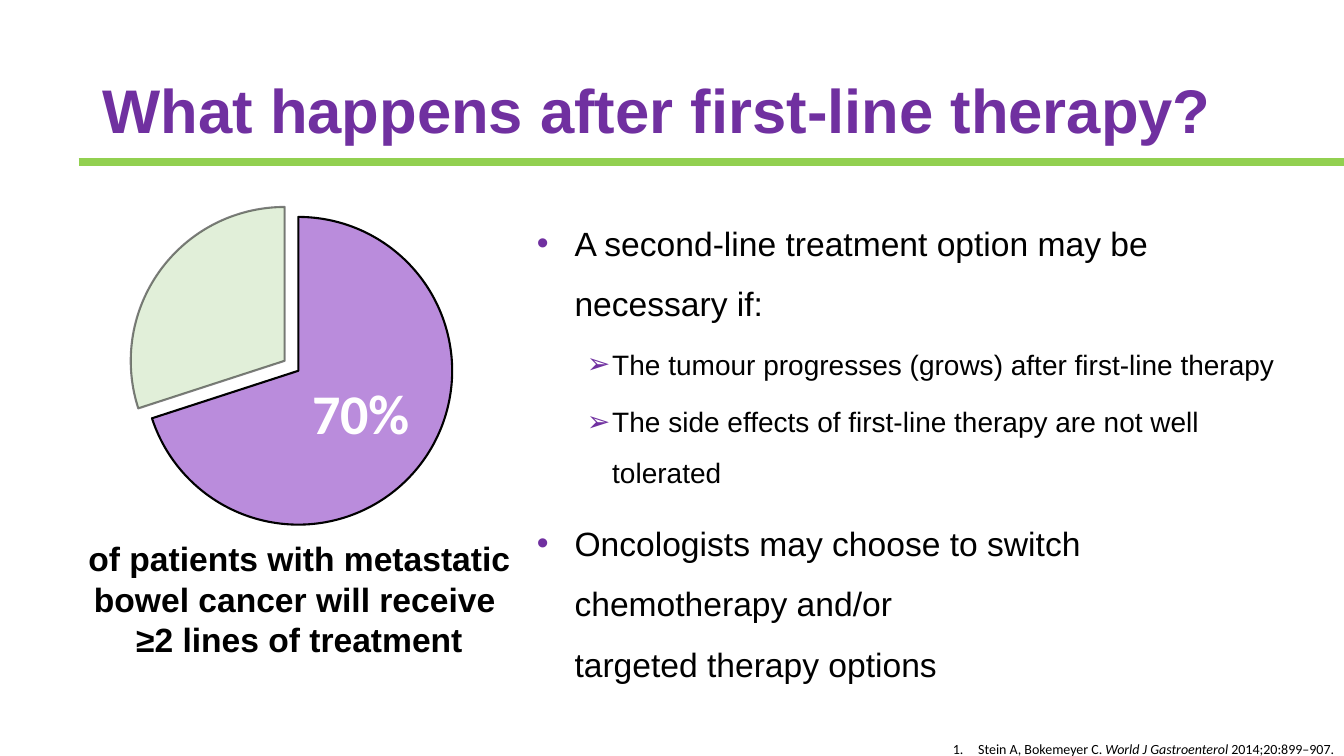
"""Builds a slide on treatment after first-line therapy for bowel cancer."""
from dataclasses import dataclass
from typing import Optional

from lxml import etree
from pptx import Presentation, util as u
from pptx.chart import data
from pptx.dml import color
from pptx.enum import chart as kinds, shapes, text
from pptx.oxml import ns

PURPLE, BLACK, WHITE = "7030A0", "000000", "FFFFFF"
ALIGN, ANCHOR = text.PP_ALIGN, text.MSO_ANCHOR


@dataclass
class Run:
    text: str
    size: float
    color: str = BLACK
    bold: bool = False
    italic: bool = False
    font: str = "Arial"


@dataclass
class Para:
    runs: list[Run]
    align: ALIGN = ALIGN.LEFT
    space: float = 1
    before: float = 0
    level: int = 0
    margin: float = 0
    hang: float = 0
    bullet: str = ""


@dataclass
class Box:
    left: float
    top: float
    width: float
    height: float
    paras: list[Para]
    anchor: ANCHOR = ANCHOR.TOP
    fill: str = ""


@dataclass
class Slice:
    value: Optional[float]
    fill: str
    alpha: int = 100
    burst: int = 0


def rgb(code: str) -> color.RGBColor:
    """Turn a hex string into a colour."""
    return color.RGBColor.from_string(code)


def sub(node, tag: str, **attrs: str):
    """Append a child element."""
    return etree.SubElement(node, ns.qn(tag), attrs)


def paint(fill, code: str, alpha: int = 100) -> None:
    """Fill with a solid colour of the given opacity."""
    fill.solid()
    fill.fore_color.rgb = rgb(code)
    if alpha < 100:
        tone = fill._xPr.find(ns.qn("a:solidFill"))[0]
        sub(tone, "a:alpha", val=str(alpha * 1000))


def write(para, item: Run) -> None:
    """Add a run, with line breaks where its text has them."""
    for i, line in enumerate(item.text.split("\n")):
        if i:
            para.add_line_break()
        run = para.add_run()
        run.text = line
        font = run.font
        font.name, font.size = item.font, u.Pt(item.size)
        font.bold, font.italic = item.bold, item.italic
        font.color.rgb = rgb(item.color)


def mark(para, item: Para) -> None:
    """Set the hanging indent and the bullet or number."""
    props = para._p.get_or_add_pPr()
    props.set("marL", str(u.Cm(item.margin)))
    props.set("indent", str(u.Cm(-item.hang)))
    if item.bullet == "1.":
        sub(props, "a:buAutoNum", type="arabicPeriod")
    else:
        sub(sub(props, "a:buClr"), "a:srgbClr", val=PURPLE)
        sub(props, "a:buFont", typeface="Arial")
        sub(props, "a:buChar", char=item.bullet)


def place(slide, box: Box) -> None:
    """Draw a box of text."""
    spot = [u.Cm(n) for n in (box.left, box.top, box.width, box.height)]
    shape = slide.shapes.add_textbox(*spot)
    if box.fill:
        paint(shape.fill, box.fill, 50)
    frame = shape.text_frame
    frame.word_wrap, frame.vertical_anchor = True, box.anchor
    for i, item in enumerate(box.paras):
        para = frame.add_paragraph() if i else frame.paragraphs[0]
        if item.bullet:
            mark(para, item)
        para.level, para.alignment = item.level, item.align
        para.line_spacing, para.space_before = item.space, u.Pt(item.before)
        for run in item.runs:
            write(para, run)


def rule(slide) -> None:
    """Draw the green line under the title."""
    line = slide.shapes.add_connector(
        shapes.MSO_CONNECTOR.STRAIGHT, u.Cm(1.98), u.Cm(4.09), u.Cm(33.87), u.Cm(4.09))
    line.line.width = u.Pt(5.5)
    paint(line.line.fill, "92D050")
    sub(line._element.spPr, "a:effectLst")


def pie(slide, parts: list[Slice]) -> None:
    """Draw the pie with its pulled-out slice."""
    source = data.CategoryChartData()
    source.categories = [str(i + 1) for i in range(len(parts))]
    source.add_series("Series 1", [part.value for part in parts])
    chart = slide.shapes.add_chart(
        kinds.XL_CHART_TYPE.PIE, u.Cm(0.23), u.Cm(5.13), u.Cm(14.58), u.Cm(8.43), source).chart
    chart.has_title = chart.has_legend = False
    chart.font.name, chart.font.size = "Calibri", u.Pt(10)
    chart.font.color.rgb = rgb(BLACK)
    plot = chart.plots[0]
    plot.vary_by_categories = True
    points = plot.series[0].points
    for i, part in enumerate(parts):
        look = points[i].format
        paint(look.fill, part.fill, part.alpha)
        look.line.width = u.Pt(1.5)
        paint(look.line.fill, BLACK, part.alpha)
    for node, part in zip(chart.element.iter(ns.qn("c:dPt")), parts):
        if part.burst:
            burst = etree.Element(ns.qn("c:explosion"), val=str(part.burst))
            node.find(ns.qn("c:spPr")).addprevious(burst)
    label = points[0].data_label
    write(label.text_frame.paragraphs[0], Run("70%", 40, WHITE, True, font="Calibri"))
    label.position = kinds.XL_LABEL_POSITION.CENTER
    plot.series[0].data_labels.show_value = False
    area = next(chart.element.iter(ns.qn("c:plotArea")))
    for old in area.findall(ns.qn("c:layout")):
        area.remove(old)
    layout = etree.Element(ns.qn("c:layout"))
    area.insert(0, layout)
    manual = sub(layout, "c:manualLayout")
    sizes = dict(layoutTarget="inner", xMode="edge", yMode="edge",
                 x="0.22", y="0.04", w="0.56", h="0.92")
    for key, val in sizes.items():
        sub(manual, "c:" + key, val=val)


def point(words: str, before: float = 10) -> Para:
    """Describe a main bullet."""
    return Para([Run(words, 24)], space=1.5, before=before, margin=0.95, hang=0.95, bullet="•")


def detail(words: str) -> Para:
    """Describe a second-level bullet."""
    return Para([Run(words, 20)], space=1.5, before=5, level=1,
                margin=1.9, hang=0.64, bullet="➢")


SLICES = [Slice(70, "BA8CDC"), Slice(30, "C5E0B4", 50, 11),
          Slice(None, "A5A5A5"), Slice(None, "FFC000")]
BODY = Box(13.28, 4.98, 19.74, 13.46, [
    point("A second-line treatment option may be necessary if:", 0),
    detail("The tumour progresses (grows) after first-line therapy"),
    detail("The side effects of first-line therapy are not well tolerated"),
    point("Oncologists may choose to switch chemotherapy and/or \ntargeted therapy options")])
TITLE = Box(2.34, 1.02, 29.21, 3.68, [Para(
    [Run("What happens after first-line therapy?", 44, PURPLE, True)], space=0.9)], ANCHOR.MIDDLE)
CITE = Box(17.32, 18.54, 16.55, 0.51, [Para(
    [Run("Stein A, Bokemeyer C. ", 10, font="Calibri"),
     Run("World J Gastroenterol", 10, italic=True, font="Calibri"),
     Run(" 2014;20:899–907.", 10, font="Calibri")],
    ALIGN.RIGHT, margin=0.64, hang=0.64, bullet="1.")], fill=WHITE)
NOTE = Box(1.88, 13.44, 11.33, 3.33, [Para([Run(
    "of patients with metastatic bowel cancer will receive \n≥2 lines of treatment",
    24, bold=True)], ALIGN.CENTER)])


def main() -> None:
    """Build and save the slide."""
    deck = Presentation()
    deck.slide_width, deck.slide_height = u.Cm(33.87), u.Cm(19.05)
    slide = deck.slides.add_slide(deck.slide_layouts[6])
    place(slide, BODY)
    place(slide, TITLE)
    rule(slide)
    place(slide, CITE)
    pie(slide, SLICES)
    place(slide, NOTE)
    deck.save("out.pptx")


if __name__ == "__main__":
    main()
